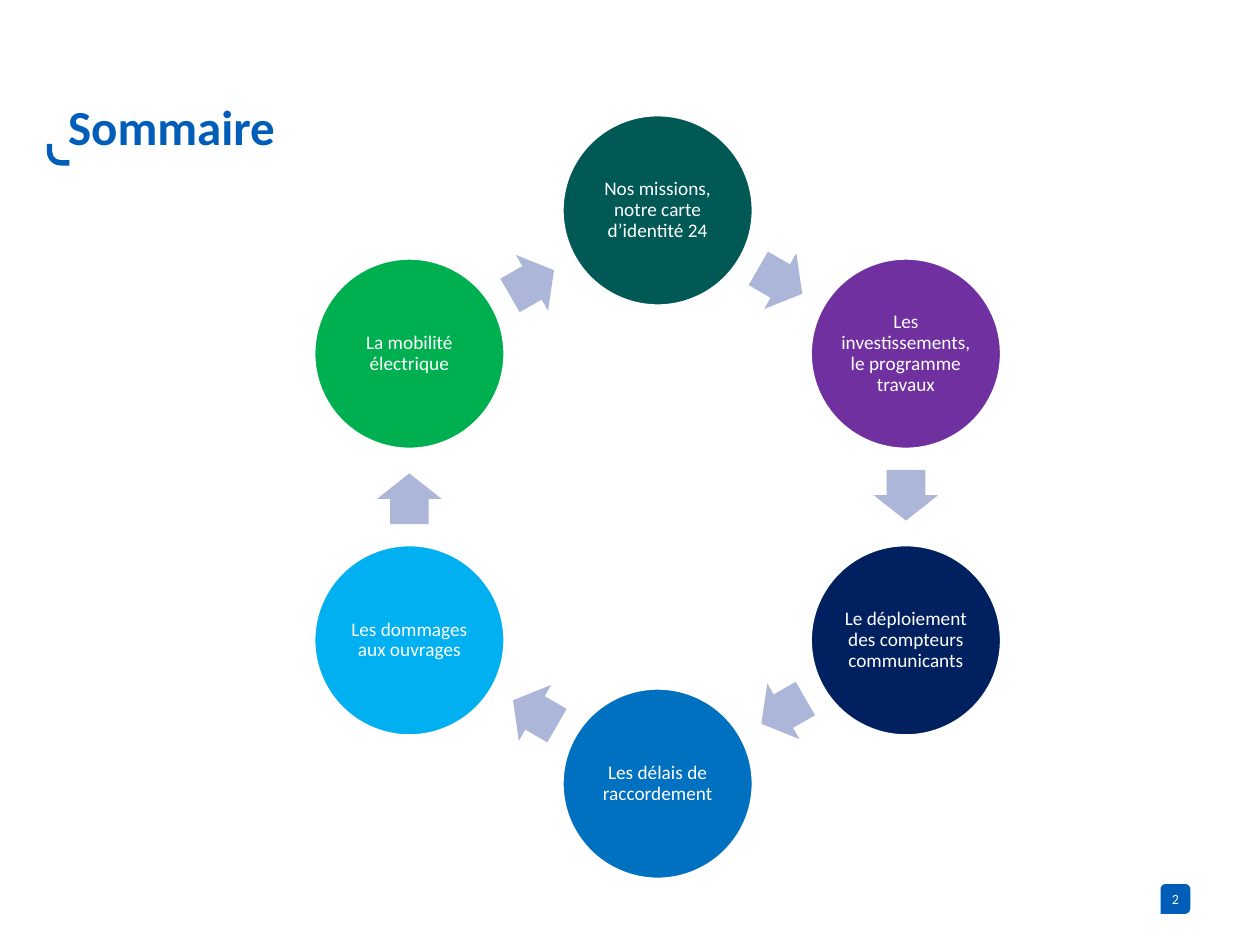
from math import cos, radians, sin

from pptx import Presentation
from pptx.dml.color import RGBColor
from pptx.enum.shapes import MSO_SHAPE
from pptx.enum.text import MSO_ANCHOR, MSO_AUTO_SIZE, PP_ALIGN
from pptx.util import Pt

TITLE = "Sommaire"
PAGE_NUMBER = "2"
TOPICS = [  # clockwise from the top
    ("Nos missions, notre carte d’identité 24", "005955"),
    ("Les investissements, le programme travaux", "7030A0"),
    ("Le déploiement des compteurs communicants", "002060"),
    ("Les délais de raccordement", "0070C0"),
    ("Les dommages aux ouvrages", "00B0F0"),
    ("La mobilité électrique", "00B050"),
]

THEME = {
    "font": "Calibri", "brand": "005EB8", "arrow": "ABB6D8", "white": "FFFFFF",
    "title": 28, "topic": 11, "number": 8,
}

# All lengths in points
CENTRE_X, CENTRE_Y, RING_RADIUS = 375.8, 284, 163.8
CIRCLE = 109.4
ARROW_WIDTH, ARROW_HEIGHT = 29, 36.8
ARROW_SETBACK = 1  # arrows sit slightly before the middle of each gap
BADGE_LEFT, BADGE_TOP, BADGE_SIZE, BADGE_RADIUS = 663.2, 505.2, 17, 3


def paint(shape, color, line=None):
    shape.shadow.inherit = False
    shape.fill.solid()
    shape.fill.fore_color.rgb = RGBColor.from_string(color)
    if line:
        shape.line.color.rgb = RGBColor.from_string(line)
        shape.line.width = Pt(2)
    else:
        shape.line.fill.background()


def write(shape, text, size, color, bold=False, align=PP_ALIGN.CENTER,
          anchor=MSO_ANCHOR.MIDDLE, spacing=1.0, margins=(0, 0), wrap=True):
    """Set text; margins are (horizontal, vertical)."""
    frame = shape.text_frame
    frame.text = text
    frame.auto_size = MSO_AUTO_SIZE.NONE
    frame.word_wrap = wrap
    frame.vertical_anchor = anchor
    frame.margin_left = frame.margin_right = Pt(margins[0])
    frame.margin_top = frame.margin_bottom = Pt(margins[1])
    para = frame.paragraphs[0]
    para.alignment = align
    para.line_spacing = spacing
    para.space_before = Pt(0)
    font = para.runs[0].font
    font.name, font.size, font.bold = THEME["font"], Pt(size), bold
    font.color.rgb = RGBColor.from_string(color)


def add_centred(page, kind, x, y, width, height):
    return page.shapes.add_shape(kind, Pt(x - width / 2), Pt(y - height / 2),
                                 Pt(width), Pt(height))


def add_title(page):
    title = page.shapes.title
    title.left, title.top, title.width, title.height = map(Pt, (36, 15.1, 647.3, 73.4))
    write(title, TITLE, THEME["title"], THEME["brand"], bold=True, align=PP_ALIGN.LEFT,
          anchor=MSO_ANCHOR.BOTTOM, spacing=0.8, margins=(2.9, 0))
    hook = page.shapes.add_shape(MSO_SHAPE.BENT_ARROW, Pt(26.8), Pt(82.2), Pt(12.8), Pt(12.8))
    for index, value in enumerate((0.24, 0.15, 0, 0.62)):
        hook.adjustments[index] = value
    hook._element.spPr.xfrm.set("flipV", "1")
    paint(hook, THEME["brand"])


def add_badge(page):
    """Page number on a square with every corner rounded but the bottom left."""
    right, bottom = BADGE_LEFT + BADGE_SIZE, BADGE_TOP + BADGE_SIZE
    near_x, near_y = BADGE_LEFT + BADGE_RADIUS, BADGE_TOP + BADGE_RADIUS
    far_x, far_y = right - BADGE_RADIUS, bottom - BADGE_RADIUS
    corners = [(near_x, near_y, 180), (far_x, near_y, 270), (far_x, far_y, 0)]
    outline = [
        (Pt(x + BADGE_RADIUS * cos(radians(start + step))),
         Pt(y + BADGE_RADIUS * sin(radians(start + step))))
        for x, y, start in corners for step in range(0, 91, 15)
    ]
    builder = page.shapes.build_freeform(Pt(BADGE_LEFT), Pt(bottom))
    builder.add_line_segments(outline, close=True)
    badge = builder.convert_to_shape()
    paint(badge, THEME["brand"])
    write(badge, PAGE_NUMBER, THEME["number"], THEME["white"], wrap=False)


def add_cycle(page):
    step = 360 / len(TOPICS)
    gap_radius = RING_RADIUS * cos(radians(step / 2))
    for index, (text, color) in enumerate(TOPICS):
        angle = radians(index * step - 90)
        circle = add_centred(page, MSO_SHAPE.OVAL, CENTRE_X + RING_RADIUS * cos(angle),
                             CENTRE_Y + RING_RADIUS * sin(angle), CIRCLE, CIRCLE)
        paint(circle, color, line=THEME["white"])
        write(circle, text, THEME["topic"], THEME["white"], spacing=0.9, margins=(1.4, 1.4))

        heading = (index + 0.5) * step
        middle, direction = radians(heading - 90), radians(heading)
        arrow = add_centred(
            page, MSO_SHAPE.RIGHT_ARROW,
            CENTRE_X + gap_radius * cos(middle) - ARROW_SETBACK * cos(direction),
            CENTRE_Y + gap_radius * sin(middle) - ARROW_SETBACK * sin(direction),
            ARROW_WIDTH, ARROW_HEIGHT)
        arrow.adjustments[0], arrow.adjustments[1] = 0.6, 0.5
        arrow.rotation = heading
        paint(arrow, THEME["arrow"])


def main():
    deck = Presentation()
    deck.slide_width, deck.slide_height = Pt(720), Pt(540)
    page = deck.slides.add_slide(deck.slide_layouts[5])
    add_badge(page)
    add_title(page)
    add_cycle(page)
    deck.save("out.pptx")


if __name__ == "__main__":
    main()
